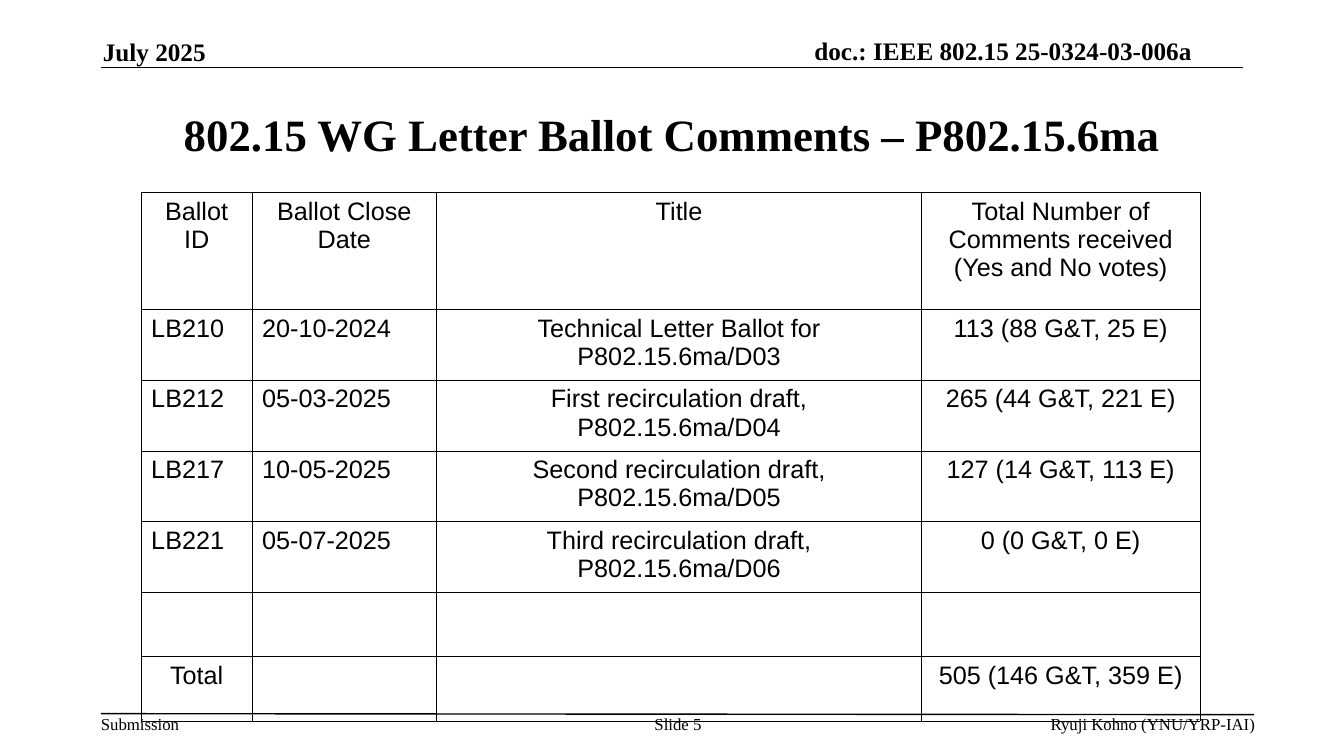
"""Build the letter ballot comments slide."""
from dataclasses import dataclass

from lxml.etree import SubElement as Sub
from pptx import Presentation
from pptx.dml.color import RGBColor as Rgb
from pptx.enum.shapes import MSO_CONNECTOR as Conn
from pptx.enum.text import MSO_ANCHOR as Anchor, PP_ALIGN as Align
from pptx.oxml.ns import qn
from pptx.util import Inches, Pt

HEAD = "802.15 WG Letter Ballot Comments – P802.15.6ma"
LEFT, MID, RIGHT = Align.LEFT, Align.CENTER, Align.RIGHT

ROWS = [
    ("Ballot ID", "Ballot Close Date", "Title",
     "Total Number of Comments received (Yes and No votes)"),
    ("LB210", "20-10-2024", "Technical Letter Ballot for P802.15.6ma/D03",
     "113 (88 G&T, 25 E)"),
    ("LB212", "05-03-2025", "First recirculation draft, P802.15.6ma/D04",
     "265 (44 G&T, 221 E)"),
    ("LB217", "10-05-2025", "Second recirculation draft, P802.15.6ma/D05",
     "127 (14 G&T, 113 E)"),
    ("LB221", "05-07-2025", "Third recirculation draft, P802.15.6ma/D06",
     "0 (0 G&T, 0 E)"),
    ("", "", "", ""),
    ("Total", "", "", "505 (146 G&T, 359 E)"),
]
COLS = (1.1, 1.83, 4.81, 2.76)
TALL = (1.16,) + (0.7,) * 4 + (0.64,) * 2
GRID = (1.4, 1.91)
RULES = [(1, 0.67, 12.33, 0.67), (1, 7.08, 12.44, 7.09)]
TOPS = [
    ("July 2025", (1.02, 0.36, 2.73, 0.3), LEFT),
    ("doc.: IEEE 802.15 25-0324-03-006a", (6.72, 0.35, 5.1, 0.3), RIGHT),
]
FEET = [
    ("Submission", (1, 7.08, 0.78, 0.2), LEFT),
    ("Slide 5", (6.34, 7.08, 0.77, 0.4), MID),
    ("Ryuji Kohno (YNU/YRP-IAI)", (7.81, 7.08, 4.64, 0.2), RIGHT),
]


@dataclass(frozen=True)
class Theme:
    ink: str = "000000"
    serif: str = "Times New Roman"
    sans: str = "Arial"
    title: int = 32
    body: int = 18
    foot: int = 12
    rule: float = 1
    edge: float = 0.06


THEME = Theme()


def write(frame, text, size=THEME.body, font=THEME.serif, bold=False, align=LEFT):
    frame.text = text
    para = frame.paragraphs[0]
    para.alignment = align
    face = para.font
    if para.runs:
        face = para.runs[0].font
    face.size, face.name, face.bold = Pt(size), font, bold
    face.color.rgb = Rgb.from_string(THEME.ink)


def label(slide, text, box, anchor=Anchor.TOP, wrap=True, **style):
    frame = slide.shapes.add_textbox(*map(Inches, box)).text_frame
    frame.margin_left = frame.margin_right = 0
    frame.margin_top = frame.margin_bottom = 0
    frame.word_wrap = wrap
    frame.vertical_anchor = anchor
    write(frame, text, **style)


def rule(slide, ends):
    line = slide.shapes.add_connector(Conn.STRAIGHT, *map(Inches, ends))
    line.line.width = Pt(THEME.rule)
    line.line.color.rgb = Rgb.from_string(THEME.ink)
    Sub(line._element.spPr, qn("a:effectLst"))


def frame_cell(cell):
    props = cell._tc.get_or_add_tcPr()
    for side in ("lnL", "lnR", "lnT", "lnB"):
        edge = Sub(props, qn(f"a:{side}"), w=str(Pt(THEME.edge)))
        fill = Sub(edge, qn("a:solidFill"))
        Sub(fill, qn("a:srgbClr"), val=THEME.ink)
    cell.fill.background()


def ballots(slide):
    size = map(Inches, (*GRID, sum(COLS), sum(TALL)))
    table = slide.shapes.add_table(len(ROWS), len(COLS), *size).table
    table.first_row = table.horz_banding = False
    for col, wide in zip(table.columns, COLS):
        col.width = Inches(wide)
    for row, tall in zip(table.rows, TALL):
        row.height = Inches(tall)
    for r, row in enumerate(ROWS):
        for c, text in enumerate(row):
            cell = table.cell(r, c)
            dated = c < 2 and 0 < r < len(ROWS) - 1
            write(cell.text_frame, text, font=THEME.sans,
                  align=LEFT if dated else MID)
            frame_cell(cell)


def main():
    deck = Presentation()
    deck.slide_width, deck.slide_height = Inches(13.33), Inches(7.5)
    slide = deck.slides.add_slide(deck.slide_layouts[5])
    title = slide.shapes.title
    title.left, title.top = Inches(1), Inches(0.75)
    title.width, title.height = Inches(11.33), Inches(1.16)
    title.text_frame.vertical_anchor = Anchor.MIDDLE
    write(title.text_frame, HEAD, size=THEME.title, bold=True, align=MID)
    for ends in RULES:
        rule(slide, ends)
    for text, box, align in TOPS:
        label(slide, text, box, Anchor.BOTTOM, bold=True, align=align)
    for text, box, align in FEET:
        label(slide, text, box, wrap=align != LEFT, size=THEME.foot, align=align)
    ballots(slide)
    deck.save("out.pptx")


if __name__ == "__main__":
    main()
